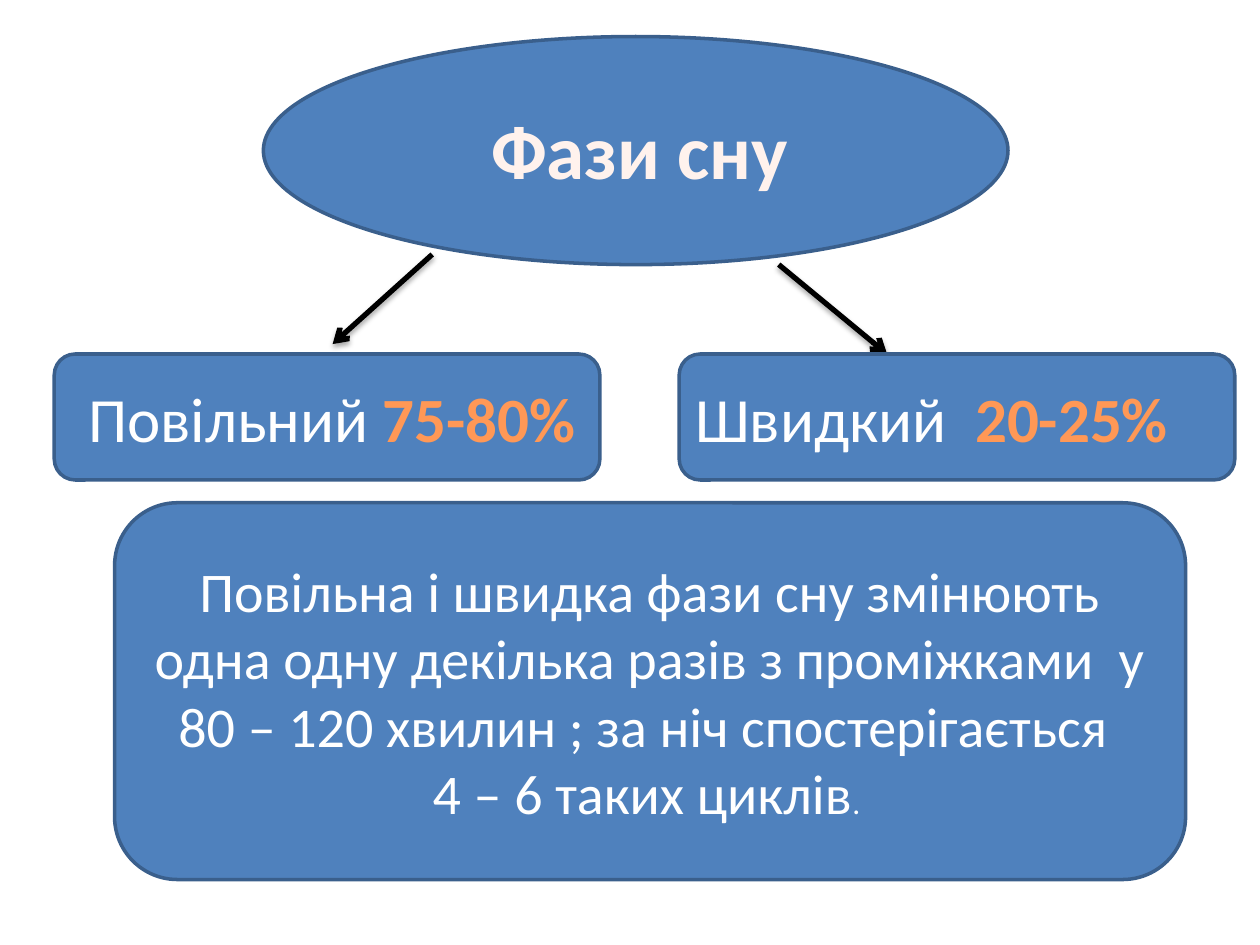
from lxml.etree import SubElement
from pptx import Presentation
from pptx.dml.color import RGBColor
from pptx.enum.shapes import MSO_CONNECTOR, MSO_SHAPE
from pptx.enum.text import MSO_ANCHOR, MSO_AUTO_SIZE, PP_ALIGN
from pptx.oxml import parse_xml
from pptx.oxml.ns import nsdecls, qn
from pptx.util import Pt

BLUE = RGBColor(0x4F, 0x81, 0xBD)
EDGE = RGBColor(0x3A, 0x5F, 0x8C)
CREAM = RGBColor(0xFF, 0xF2, 0xED)
WHITE = RGBColor(0xFF, 0xFF, 0xFF)
ORANGE = RGBColor(0xFF, 0x98, 0x56)
BLACK = RGBColor(0, 0, 0)

TITLE = "Фази сну"
OVAL = (150.5, 20.9, 425.5, 130.3)
HEAD = (223.9, 54.7, 283.7, 60.5)
ARROWS = [(445, 151.2, 506.9, 202.3), (247, 145.4, 190.1, 196.6)]
PHASES = [
    ("Повільний ", "75-80%", (31, 311.8), (36.7, 306)),
    ("Швидкий  ", "20-25%", (388.1, 317.5), (382.3, 300.2)),
]
BOX_TOP, BOX_TALL = 202.3, 72
TEXT_TOP, TEXT_TALL = 213.1, 51.1
NOTE = (65.5, 287.3, 612, 215.3)
LINES = [
    [("Повільна і швидка фази сну змінюють одна одну декілька разів "
      "з проміжками  у 80 – 120 хвилин ; за ніч спостерігається ", 32)],
    [("4 – 6 таких циклів", 32), (". ", 18)],
]
SHADOW = (
    f'<a:effectLst {nsdecls("a")}><a:outerShdw blurRad="{Pt(3.1)}" '
    f'dist="{Pt(1.8)}" dir="5400000" rotWithShape="0"><a:srgbClr val="000000">'
    '<a:alpha val="35000"/></a:srgbClr></a:outerShdw></a:effectLst>'
)


def points(place):
    return [Pt(n) for n in place]


def add_box(slide, kind, place):
    box = slide.shapes.add_shape(kind, *points(place))
    box.shadow.inherit = False
    box.fill.solid()
    box.fill.fore_color.rgb = BLUE
    box.line.color.rgb = EDGE
    box.line.width = Pt(2)
    return box


def add_run(para, text, size, color, bold=False):
    run = para.add_run()
    run.text = text
    font = run.font
    font.name, font.size, font.bold = "Calibri", Pt(size), bold
    font.color.rgb = color


def add_arrow(slide, ends):
    arrow = slide.shapes.add_connector(MSO_CONNECTOR.STRAIGHT, *points(ends))
    arrow.line.color.rgb = BLACK
    arrow.line.width = Pt(3)
    SubElement(arrow.line._get_or_add_ln(), qn("a:tailEnd"), type="arrow")
    arrow._element.spPr.append(parse_xml(SHADOW))


def add_title(slide):
    title = slide.shapes.title
    title.left, title.top, title.width, title.height = points(HEAD)
    frame = title.text_frame
    frame.auto_size = MSO_AUTO_SIZE.NONE
    frame.vertical_anchor = MSO_ANCHOR.TOP
    para = frame.paragraphs[0]
    para.alignment = PP_ALIGN.CENTER
    add_run(para, TITLE, 44, CREAM, True)
    tree = title._element.getparent()
    tree.append(title._element)


def add_phase(slide, name, share, box, label):
    add_box(slide, MSO_SHAPE.ROUNDED_RECTANGLE,
            (box[0], BOX_TOP, box[1], BOX_TALL))
    text = slide.shapes.add_textbox(
        *points((label[0], TEXT_TOP, label[1], TEXT_TALL)))
    text.text_frame.word_wrap = True
    para = text.text_frame.paragraphs[0]
    para.alignment = PP_ALIGN.CENTER
    add_run(para, name, 36, WHITE)
    add_run(para, share, 36, ORANGE, True)


def add_note(slide):
    frame = add_box(slide, MSO_SHAPE.ROUNDED_RECTANGLE, NOTE).text_frame
    frame.word_wrap = True
    frame.vertical_anchor = MSO_ANCHOR.MIDDLE
    for i, line in enumerate(LINES):
        para = frame.add_paragraph() if i else frame.paragraphs[0]
        para.alignment = PP_ALIGN.CENTER
        for text, size in line:
            add_run(para, text, size, WHITE)


def main():
    deck = Presentation()
    deck.slide_width, deck.slide_height = Pt(720), Pt(540)
    slide = deck.slides.add_slide(deck.slide_layouts[5])
    add_box(slide, MSO_SHAPE.OVAL, OVAL)
    add_title(slide)
    for ends in ARROWS:
        add_arrow(slide, ends)
    for phase in PHASES:
        add_phase(slide, *phase)
    add_note(slide)
    deck.save("out.pptx")


if __name__ == "__main__":
    main()
